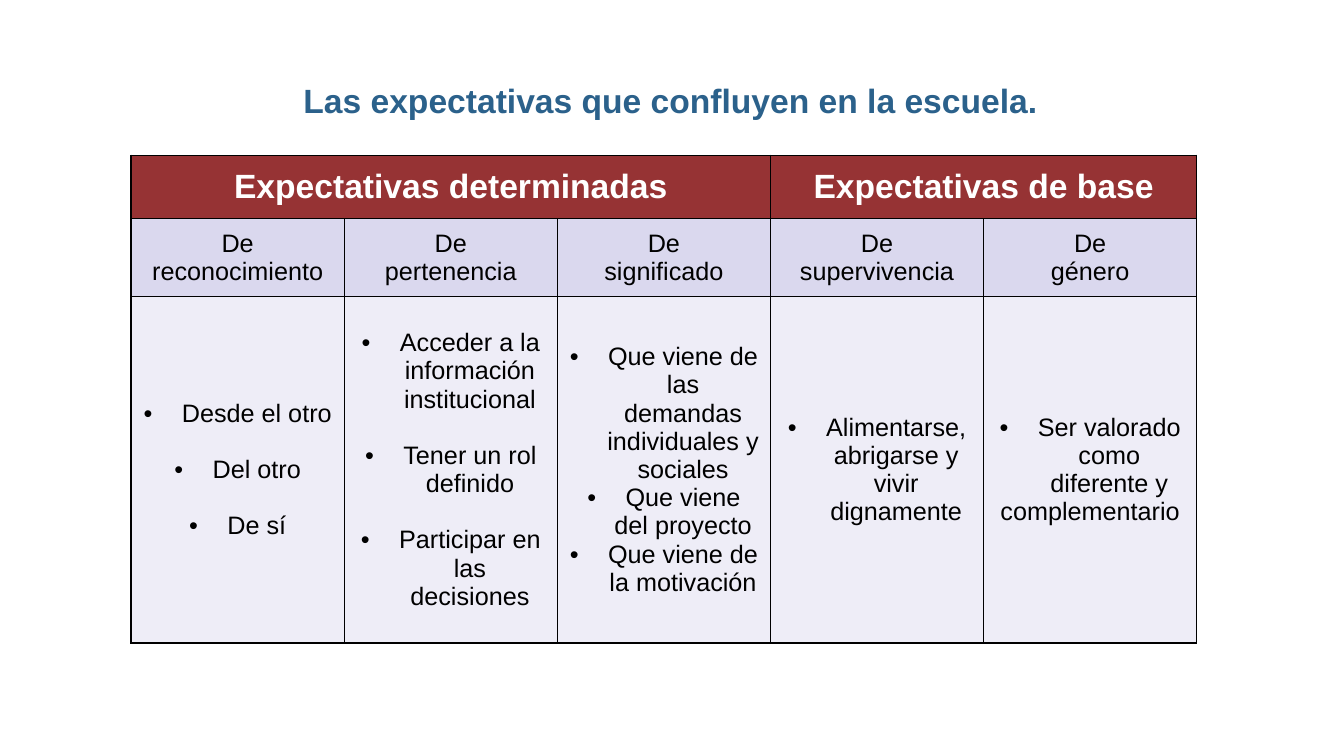
from dataclasses import dataclass

from lxml import etree
from pptx import Presentation
from pptx.dml.color import RGBColor
from pptx.enum import text
from pptx.oxml import ns
from pptx.util import Inches, Pt

# Content
TITLE = "Las expectativas que confluyen en la escuela."
GROUPS = [("Expectativas determinadas", 3), ("Expectativas de base", 2)]
# Each column: heading lines, bullets, unbulleted closing line, gap between bullets (points)
COLUMNS = [
    (["De", "reconocimiento"], ["Desde el otro", "Del otro", "De sí"], "", 20),
    (["De", "pertenencia"],
     ["Acceder a la información institucional", "Tener un rol definido",
      "Participar en las decisiones"], "", 20),
    (["De", "significado"],
     ["Que viene de las demandas individuales y sociales",
      "Que viene del proyecto", "Que viene de la motivación"], "", 0),
    (["De", "supervivencia"], ["Alimentarse, abrigarse y vivir dignamente"], "", 0),
    (["De", "género"], ["Ser valorado como diferente y"], "complementario", 0),
]


@dataclass(frozen=True)
class Theme:
    font: str = "Arial"
    large: int = 24
    normal: int = 18
    title: str = "2B618B"
    group: str = "963334"
    heading: str = "DAD8EE"
    body: str = "EEEDF7"
    white: str = "FFFFFF"
    black: str = "000000"


THEME = Theme()
TABLE_LEFT, TABLE_TOP, TABLE_WIDTH = 1.3, 1.54, 10.57
ROW_HEIGHTS = [0.63, 0.77, 3.44]
HANGING = 0.38


def format_para(para, size, color, bold=False):
    para.alignment = text.PP_ALIGN.CENTER
    for span in para.runs:
        span.font.name = THEME.font
        span.font.size = Pt(size)
        span.font.bold = bold
        span.font.color.rgb = RGBColor.from_string(color)


def add_bullet(para):
    props = para._p.get_or_add_pPr()
    props.set("marL", str(Inches(HANGING)))
    props.set("indent", str(-Inches(HANGING)))
    etree.SubElement(props, ns.qn("a:buFont"), typeface=THEME.font)
    etree.SubElement(props, ns.qn("a:buChar"), char="•")


def style_cell(cell, fill):
    cell.vertical_anchor = text.MSO_ANCHOR.MIDDLE
    props = cell._tc.get_or_add_tcPr()
    for side in ("lnL", "lnR", "lnT", "lnB"):
        line = etree.SubElement(props, ns.qn("a:" + side), w=str(Pt(1)))
        solid = etree.SubElement(line, ns.qn("a:solidFill"))
        etree.SubElement(solid, ns.qn("a:srgbClr"), val=THEME.black)
    cell.fill.solid()
    cell.fill.fore_color.rgb = RGBColor.from_string(fill)


def fill_cell(cell, lines, size, color, bold=False, bullets=0, gap=0):
    """Write one paragraph per line; the first `bullets` lines get a bullet."""
    frame = cell.text_frame
    frame.text = "\n".join(lines)
    for index, para in enumerate(frame.paragraphs):
        if index and gap:
            para.space_before = Pt(gap)
        if index < bullets:
            add_bullet(para)
        format_para(para, size, color, bold)


def add_title(page):
    box = page.shapes.title
    box.left, box.top, box.width, box.height = map(Inches, (1.05, 0.69, 11.2, 0.7))
    frame = box.text_frame
    frame.text = TITLE
    frame.word_wrap = True
    frame.auto_size = text.MSO_AUTO_SIZE.NONE
    frame.vertical_anchor = text.MSO_ANCHOR.TOP
    frame.margin_top = frame.margin_bottom = Inches(0.1)
    format_para(frame.paragraphs[0], THEME.large, THEME.title, bold=True)


def add_expectations(page):
    table = page.shapes.add_table(
        len(ROW_HEIGHTS), len(COLUMNS), Inches(TABLE_LEFT), Inches(TABLE_TOP),
        Inches(TABLE_WIDTH), Inches(sum(ROW_HEIGHTS))).table
    table.horz_banding = False
    table.first_row = False
    for column in table.columns:
        column.width = Inches(TABLE_WIDTH / len(COLUMNS))
    for row, height, fill in zip(table.rows, ROW_HEIGHTS,
                                 (THEME.group, THEME.heading, THEME.body)):
        row.height = Inches(height)
        for cell in row.cells:
            style_cell(cell, fill)

    # Group headings across several columns
    start = 0
    for name, span in GROUPS:
        cell = table.cell(0, start)
        cell.merge(table.cell(0, start + span - 1))
        fill_cell(cell, [name], THEME.large, THEME.white, bold=True)
        start += span

    # Column headings and bulleted lists
    for index, (heading, bullets, closing, gap) in enumerate(COLUMNS):
        fill_cell(table.cell(1, index), heading, THEME.normal, THEME.black)
        lines = bullets + ([closing] if closing else [])
        fill_cell(table.cell(2, index), lines, THEME.normal, THEME.black,
                  bullets=len(bullets), gap=gap)


def main():
    deck = Presentation()
    deck.slide_width, deck.slide_height = Inches(13.33), Inches(7.5)
    page = deck.slides.add_slide(deck.slide_layouts[5])
    add_title(page)
    add_expectations(page)
    deck.save("out.pptx")


if __name__ == "__main__":
    main()
